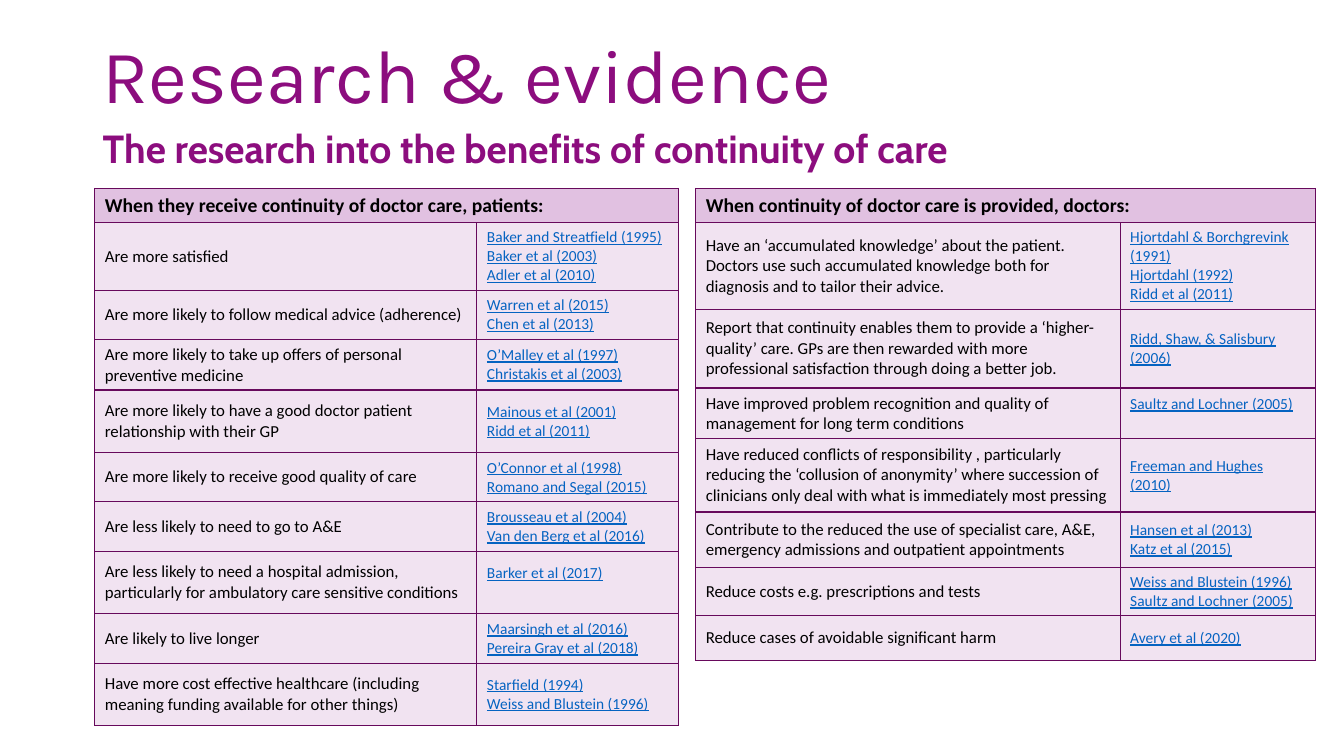
from dataclasses import dataclass

from lxml import etree
from pptx import Presentation
from pptx import util as u
from pptx.dml.color import RGBColor
from pptx.enum import text
from pptx.oxml import ns


@dataclass(frozen=True)
class Theme:
    heading: str = "8C0D7E"
    ink: str = "000000"
    reference: str = "0563C1"
    border: str = "67095C"
    header_fill: str = "E1C1E1"
    body_fill: str = "F1E3F1"
    title_font: str = "Karla"
    subtitle_font: str = "Cabin"
    table_font: str = "Calibri"
    title_size: int = 54
    subtitle_size: int = 28
    header_size: int = 14
    body_size: int = 12
    reference_size: int = 11


class EvidenceSlide:
    def __init__(self, deck, theme):
        self.theme = theme
        self.page = deck.slides.add_slide(deck.slide_layouts[6])

    def style(self, para, font, size, color, bold=False, underline=False):
        for span in para.runs:
            span.font.name = font
            span.font.size = u.Pt(size)
            span.font.color.rgb = RGBColor.from_string(color)
            span.font.bold = bold
            span.font.underline = underline

    def heading(self, words, top, height, font, size, spacing, anchor, bold=False):
        box = self.page.shapes.add_textbox(
            u.Inches(0.92), u.Inches(top), u.Inches(12), u.Inches(height))
        frame = box.text_frame
        frame.word_wrap = True
        frame.vertical_anchor = anchor
        frame.text = words
        para = frame.paragraphs[0]
        para.line_spacing = spacing
        self.style(para, font, size, self.theme.heading, bold)

    def outline(self, cell):
        properties = cell._tc.get_or_add_tcPr()
        for side in ("lnL", "lnR", "lnT", "lnB"):
            line = etree.SubElement(properties, ns.qn(f"a:{side}"), w=str(u.Pt(1)))
            fill = etree.SubElement(line, ns.qn("a:solidFill"))
            etree.SubElement(fill, ns.qn("a:srgbClr"), val=self.theme.border)

    def cell(self, cell, words, fill, size, color, bold=False, underline=False):
        self.outline(cell)
        cell.fill.solid()
        cell.fill.fore_color.rgb = RGBColor.from_string(fill)
        cell.vertical_anchor = text.MSO_ANCHOR.MIDDLE
        cell.margin_left = cell.margin_right = u.Inches(0.1)
        cell.margin_top = cell.margin_bottom = u.Inches(0.05)
        cell.text_frame.text = words
        for para in cell.text_frame.paragraphs:
            self.style(para, self.theme.table_font, size, color, bold, underline)

    def evidence_table(self, left, widths, header, header_height, rows):
        theme = self.theme
        heights = [header_height] + [row[0] for row in rows]
        frame = self.page.shapes.add_table(
            len(heights), 2, u.Inches(left), u.Inches(1.87),
            u.Inches(sum(widths)), u.Inches(sum(heights)))
        table = frame.table
        table.first_row = table.horz_banding = False
        for column, width in zip(table.columns, widths):
            column.width = u.Inches(width)
        for row, height in zip(table.rows, heights):
            row.height = u.Inches(height)

        # Header across both columns
        table.cell(0, 0).merge(table.cell(0, 1))
        for column in range(2):
            self.cell(table.cell(0, column), "" if column else header,
                      theme.header_fill, theme.header_size, theme.ink, bold=True)

        # Findings with their references
        for index, (_, finding, references) in enumerate(rows, 1):
            self.cell(table.cell(index, 0), finding, theme.body_fill,
                      theme.body_size, theme.ink)
            source = table.cell(index, 1)
            self.cell(source, "\n".join(references), theme.body_fill,
                      theme.reference_size, theme.reference, underline=True)
            if references[0] in RAISED:
                source.margin_bottom = u.Inches(0.23)


# Single references that sit above the middle of their row
RAISED = ("Barker et al (2017)", "Saultz and Lochner (2005)")

PATIENTS = [
    (0.67, "Are more satisfied",
     ["Baker and Streatfield (1995)", "Baker et al (2003)", "Adler et al (2010)"]),
    (0.49, "Are more likely to follow medical advice (adherence)",
     ["Warren et al (2015)", "Chen et al (2013)"]),
    (0.49, "Are more likely to take up offers of personal preventive medicine",
     ["O’Malley et al (1997)", "Christakis et al (2003)"]),
    (0.62, "Are more likely to have a good doctor patient relationship with their GP",
     ["Mainous et al (2001)", "Ridd et al (2011)"]),
    (0.49, "Are more likely to receive good quality of care",
     ["O’Connor et al (1998)", "Romano and Segal (2015)"]),
    (0.49, "Are less likely to need to go to A&E",
     ["Brousseau et al (2004)", "Van den Berg et al (2016)"]),
    (0.62, "Are less likely to need a hospital admission, particularly for "
     "ambulatory care sensitive conditions",
     ["Barker et al (2017)"]),
    (0.49, "Are likely to live longer",
     ["Maarsingh et al (2016)", "Pereira Gray et al (2018)"]),
    (0.62, "Have more cost effective healthcare (including meaning funding "
     "available for other things)",
     ["Starfield (1994)", "Weiss and Blustein (1996)"]),
]

DOCTORS = [
    (0.86, "Have an ‘accumulated knowledge’ about the patient. Doctors use such "
     "accumulated knowledge both for diagnosis and to tailor their advice.",
     ["Hjortdahl & Borchgrevink (1991)", "Hjortdahl (1992)", "Ridd et al (2011)"]),
    (0.78, "Report that continuity enables them to provide a ‘higher-quality’ care. "
     "GPs are then rewarded with more professional satisfaction through doing "
     "a better job.",
     ["Ridd, Shaw, & Salisbury (2006)"]),
    (0.5, "Have improved problem recognition and quality of management for long "
     "term conditions",
     ["Saultz and Lochner (2005)"]),
    (0.73, "Have reduced conflicts of responsibility , particularly reducing the "
     "‘collusion of anonymity’ where succession of clinicians only deal with "
     "what is immediately most pressing",
     ["Freeman and Hughes (2010)"]),
    (0.55, "Contribute to the reduced the use of specialist care, A&E, emergency "
     "admissions and outpatient appointments",
     ["Hansen et al (2013)", "Katz et al (2015)"]),
    (0.48, "Reduce costs e.g. prescriptions and tests",
     ["Weiss and Blustein (1996)", "Saultz and Lochner (2005)"]),
    (0.44, "Reduce cases of avoidable significant harm",
     ["Avery et al (2020)"]),
]


def main():
    deck = Presentation()
    deck.slide_width, deck.slide_height = u.Inches(13.33), u.Inches(7.5)
    theme = Theme()
    slide = EvidenceSlide(deck, theme)

    # Headings
    slide.heading("Research & evidence", 0.3, 0.97, theme.title_font,
                  theme.title_size, 0.9, text.MSO_ANCHOR.MIDDLE)
    slide.heading("The research into the benefits of continuity of care", 1.27, 0.5,
                  theme.subtitle_font, theme.subtitle_size, 0.8,
                  text.MSO_ANCHOR.TOP, bold=True)

    # Evidence tables
    slide.evidence_table(0.94, (3.79, 2), "When they receive continuity of doctor "
                         "care, patients:", 0.34, PATIENTS)
    slide.evidence_table(6.9, (4.21, 1.94), "When continuity of doctor care is "
                         "provided, doctors:", 0.34, DOCTORS)
    deck.save("out.pptx")


if __name__ == "__main__":
    main()
